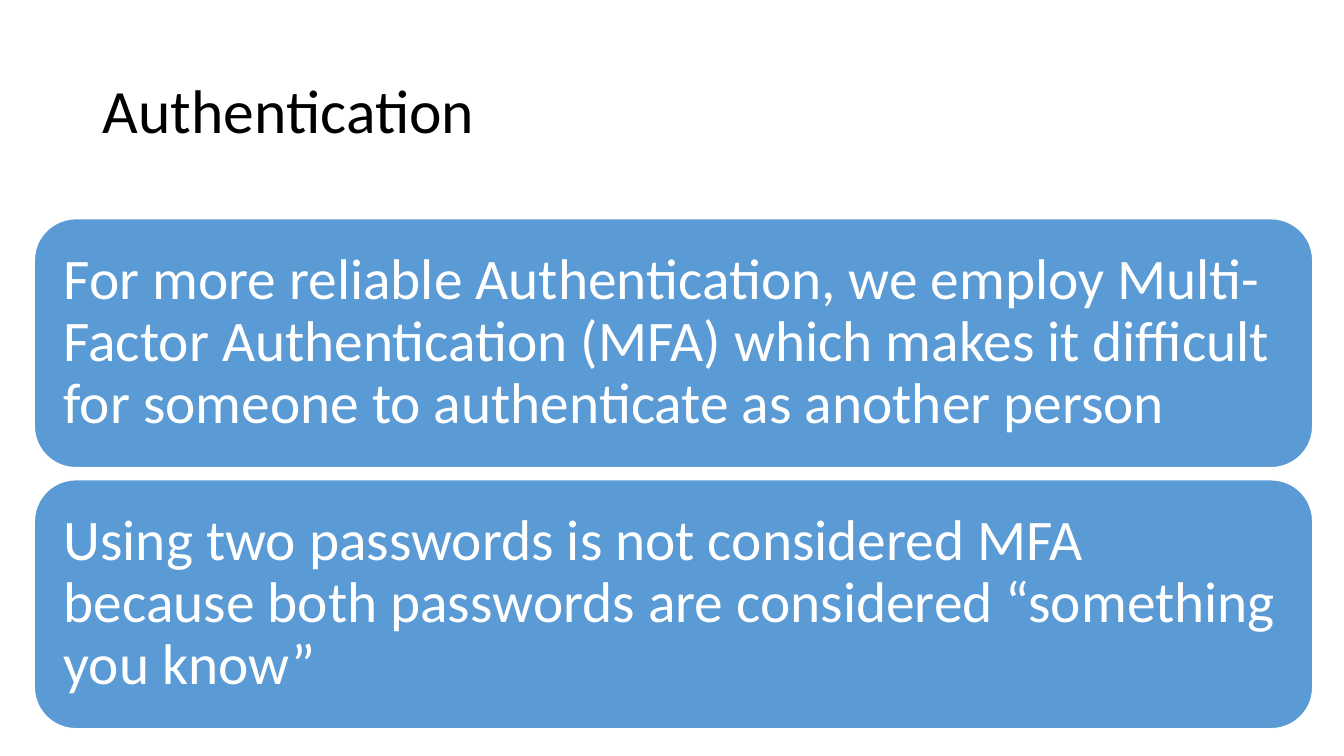
from dataclasses import dataclass

from pptx import Presentation
from pptx.dml.color import RGBColor
from pptx.enum.shapes import MSO_SHAPE
from pptx.enum.text import MSO_ANCHOR, MSO_AUTO_SIZE, PP_ALIGN
from pptx.slide import Slide
from pptx.text.text import TextFrame
from pptx.util import Emu, Pt

COLORS = {"card": "5B9BD5", "light": "FFFFFF", "title": "000000"}
FONT = "Calibri"
LEFT, TOP, WIDTH, HEIGHT, STEP, INSET = 34, 217, 1268, 247, 259, 17


@dataclass
class Card:
    """Hold one statement and its row."""

    row: int
    text: str


CARDS = [
    Card(0, "For more reliable Authentication, we employ Multi-Factor Authentication (MFA) "
            "which makes it difficult for someone to authenticate as another person"),
    Card(1, "Using two passwords is not considered MFA because both passwords are "
            "considered “something you know”"),
]


def px(count: int) -> Emu:
    """Turn px into EMU at 100 px to the inch."""
    return Emu(count * 9144)


def color(name: str) -> RGBColor:
    """Look up a colour by name."""
    return RGBColor.from_string(COLORS[name])


def write(frame: TextFrame, text: str, size: int, tint: str) -> None:
    """Fill a frame with one left-aligned paragraph, centred in height."""
    frame.text = text
    frame.word_wrap = True
    frame.auto_size = MSO_AUTO_SIZE.NONE
    frame.vertical_anchor = MSO_ANCHOR.MIDDLE
    para = frame.paragraphs[0]
    para.alignment = PP_ALIGN.LEFT
    para.line_spacing = 0.9
    para.font.name = FONT
    para.font.size = Pt(size)
    para.font.color.rgb = color(tint)


def draw_title(slide: Slide, text: str) -> None:
    """Place and write the slide title."""
    title = slide.shapes.title
    title.left, title.top, title.width, title.height = map(px, (92, 40, 1150, 145))
    write(title.text_frame, text, 44, "title")


def draw_card(slide: Slide, card: Card) -> None:
    """Draw one rounded card with its statement."""
    shape = slide.shapes.add_shape(
        MSO_SHAPE.ROUNDED_RECTANGLE,
        px(LEFT), px(TOP + card.row * STEP), px(WIDTH), px(HEIGHT),
    )
    shape.shadow.inherit = False
    shape.fill.solid()
    shape.fill.fore_color.rgb = color("card")
    shape.line.color.rgb = color("light")
    shape.line.width = Pt(1)
    frame = shape.text_frame
    frame.margin_left = frame.margin_right = px(INSET)
    frame.margin_top = frame.margin_bottom = px(INSET)
    write(frame, card.text, 41, "light")


def main() -> None:
    """Build and save the slide."""
    deck = Presentation()
    deck.slide_width, deck.slide_height = px(1333), px(750)
    slide = deck.slides.add_slide(deck.slide_layouts.get_by_name("Title Only"))
    draw_title(slide, "Authentication")
    for card in CARDS:
        draw_card(slide, card)
    deck.save("out.pptx")


if __name__ == "__main__":
    main()
